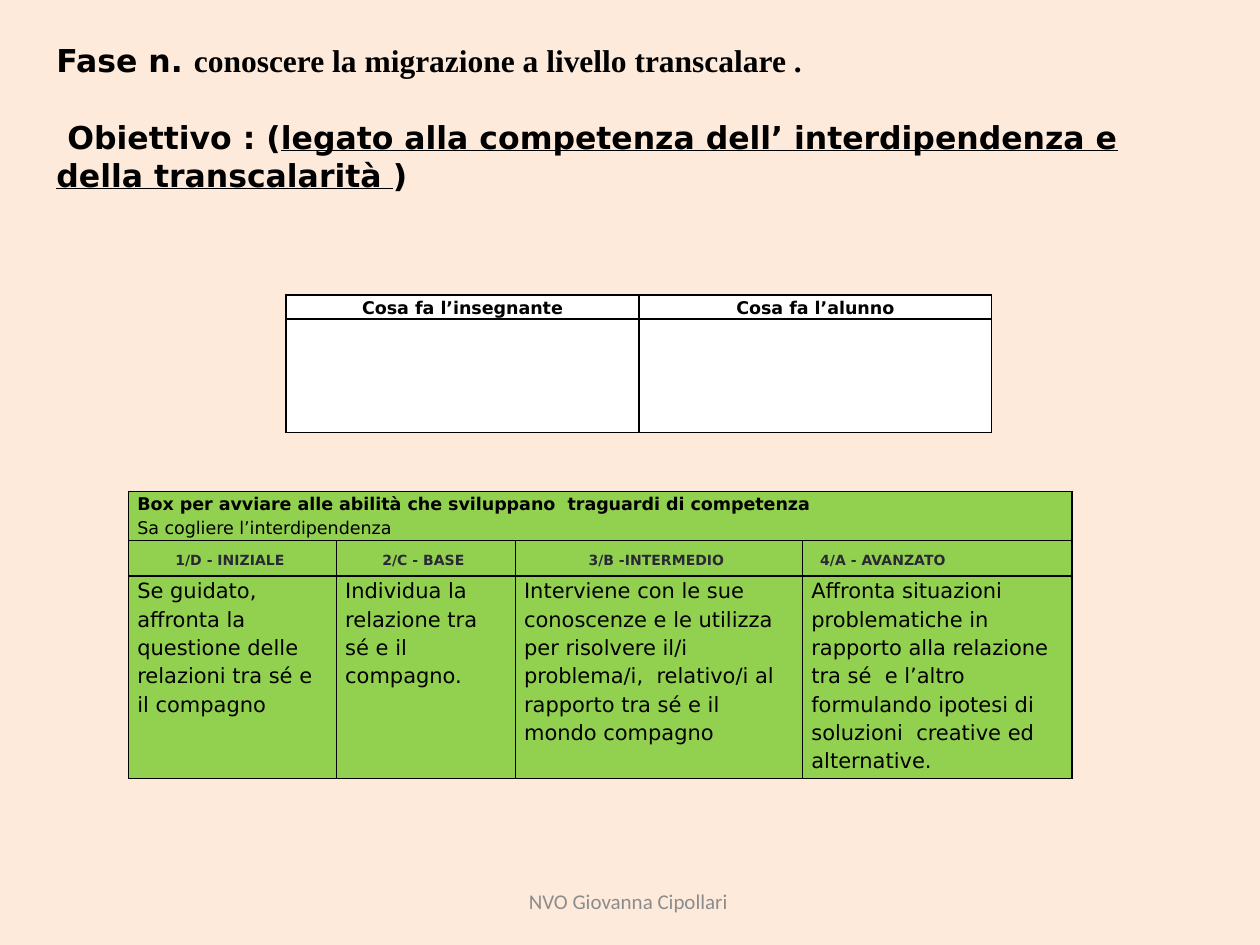
from lxml.etree import SubElement
from pptx import Presentation
from pptx.dml.color import RGBColor
from pptx.enum.text import MSO_ANCHOR, PP_ALIGN
from pptx.oxml.ns import qn
from pptx.util import Inches, Pt

HUES = {"back": "FDEADA", "ink": "000000", "head": "292934",
        "foot": "8C8C8C", "green": "92D050", "white": "FFFFFF"}
SANS = "DejaVu Sans"
UNIT = 0.1


def grid(count):
    return Inches(count * UNIT)


def hue(name):
    return RGBColor.from_string(HUES[name])


class Page:
    def __init__(self, deck):
        self.slide = deck.slides.add_slide(deck.slide_layouts[6])
        fill = self.slide.background.fill
        fill.solid()
        fill.fore_color.rgb = hue("back")

    def style(self, part, size, bold=False, ink="ink", face=SANS):
        part.font.size = Pt(size)
        part.font.bold = bold
        part.font.color.rgb = hue(ink)
        part.font.name = face

    def text(self, place, anchor=MSO_ANCHOR.TOP):
        frame = self.slide.shapes.add_textbox(*map(grid, place)).text_frame
        frame.word_wrap = True
        frame.vertical_anchor = anchor
        return frame

    def table(self, left, top, cols, rows, fill):
        place = map(grid, (left, top, sum(cols), sum(rows)))
        table = self.slide.shapes.add_table(len(rows), len(cols), *place).table
        table.first_row = table.horz_banding = False
        for col, width in zip(table.columns, cols):
            col.width = grid(width)
        for row, height in zip(table.rows, rows):
            row.height = grid(height)
        for cell in table.iter_cells():
            self.border(cell)
            cell.fill.solid()
            cell.fill.fore_color.rgb = hue(fill)
            cell.margin_left = cell.margin_right = grid(0.7)
            cell.margin_top = cell.margin_bottom = 0
        return table

    def border(self, cell):
        props = cell._tc.get_or_add_tcPr()
        for side in ("lnL", "lnR", "lnT", "lnB"):
            line = SubElement(props, qn(f"a:{side}"), w=str(Pt(1)))
            paint = SubElement(line, qn("a:solidFill"))
            SubElement(paint, qn("a:srgbClr"), val=HUES["ink"])

    def label(self, cell, lines, size, bold=False, ink="ink",
              align=PP_ALIGN.LEFT, space=1.15):
        cell.text = "\n".join(lines)
        for para in cell.text_frame.paragraphs:
            para.alignment = align
            para.line_spacing = space
            self.style(para, size, bold, ink)


def title(page):
    frame = page.text((3.5, 2.8, 89, 16.2))
    phase = frame.paragraphs[0]
    goal = frame.add_paragraph()
    goal.space_before = Pt(22)
    for para, words, face, line in (
            (phase, "Fase n. ", SANS, False),
            (phase, "conoscere la migrazione a livello transcalare .",
             "Times New Roman", False),
            (goal, " Obiettivo : (", SANS, False),
            (goal, "legato alla competenza dell’ interdipendenza e della transcalarità ",
             SANS, True),
            (goal, ")", SANS, False)):
        run = para.add_run()
        run.text = words
        page.style(run, 18, True, face=face)
        run.font.underline = line


def roles(page):
    table = page.table(22.7, 23.4, (28, 28), (1.9, 9), "white")
    for col, words in enumerate(("Cosa fa l’insegnante", "Cosa fa l’alunno")):
        page.label(table.cell(0, col), [words], 10, True, align=PP_ALIGN.CENTER)


def levels(page):
    table = page.table(10.2, 39, (16.5, 14.2, 22.8, 21.4), (3.9, 2.8, 16.1), "green")
    top = table.cell(0, 0)
    top.merge(table.cell(0, 3))
    page.label(top, ["Box per avviare alle abilità che sviluppano  traguardi di competenza ",
                     "Sa cogliere l’interdipendenza  "], 10, align=PP_ALIGN.JUSTIFY)
    top.text_frame.paragraphs[0].font.bold = True
    steps = (
        ("1/D - INIZIALE ", PP_ALIGN.CENTER,
         "Se guidato, affronta la questione delle relazioni tra sé e il compagno"),
        ("2/C - BASE ", PP_ALIGN.CENTER,
         "Individua la relazione tra sé e il compagno."),
        ("3/B -INTERMEDIO ", PP_ALIGN.CENTER,
         "Interviene con le sue conoscenze e le utilizza per risolvere il/i "
         "problema/i,  relativo/i al rapporto tra sé e il mondo compagno"),
        ("4/A - AVANZATO", PP_ALIGN.LEFT,
         "Affronta situazioni problematiche in rapporto alla relazione tra sé  "
         "e l’altro  formulando ipotesi di soluzioni  creative ed alternative."))
    for col, (name, align, words) in enumerate(steps):
        page.label(table.cell(1, col), [name], 8, True, "head", align, Pt(16.4))
        page.label(table.cell(2, col), [words], 12)
    table.cell(1, 3).margin_left = grid(1.4)


def footer(page):
    para = page.text((34.2, 69.5, 31.7, 4), MSO_ANCHOR.MIDDLE).paragraphs[0]
    para.text = "NVO Giovanna Cipollari "
    para.alignment = PP_ALIGN.CENTER
    page.style(para, 12, ink="foot", face="Calibri")


def main():
    deck = Presentation()
    deck.slide_width, deck.slide_height = grid(100), grid(75)
    page = Page(deck)
    for part in (footer, title, roles, levels):
        part(page)
    deck.save("out.pptx")


if __name__ == "__main__":
    main()
